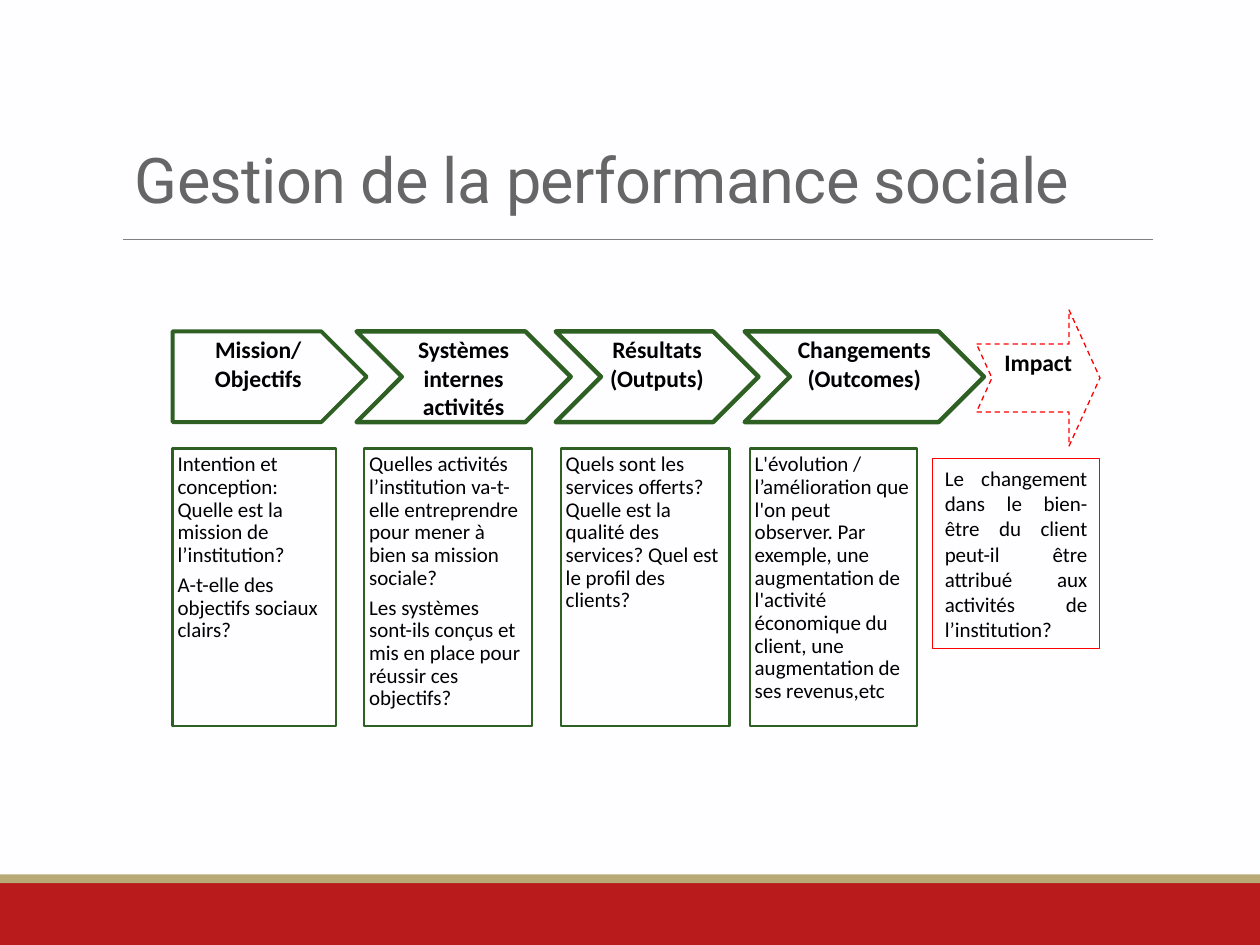
from lxml.etree import SubElement
from pptx import Presentation
from pptx.dml.color import RGBColor
from pptx.enum.dml import MSO_LINE
from pptx.enum.shapes import MSO_CONNECTOR, MSO_SHAPE
from pptx.enum.text import MSO_ANCHOR, PP_ALIGN
from pptx.oxml.ns import qn
from pptx.util import Inches, Pt

PAPER = RGBColor(0xFE, 0xFD, 0xFF)
WHITE = RGBColor(0xFF, 0xFF, 0xFF)
BLACK = RGBColor(0, 0, 0)
GREEN = RGBColor(0x2E, 0x60, 0x23)
RED = RGBColor(0xFF, 0, 0)
BAND_RED = RGBColor(0xB9, 0x1A, 0x1B)
BAND_GOLD = RGBColor(0xB8, 0xAA, 0x76)
RULE_GREY = RGBColor(0x80, 0x80, 0x80)
TITLE_GREY = RGBColor(0x66, 0x66, 0x66)

STEP_TOP, STEP_HEIGHT = 2.63, 0.72
CARD_TOP, CARD_HEIGHT = 3.56, 2.2

# Steps of the chain: shape, left, width, line width, paragraphs
STEPS = [
    (MSO_SHAPE.PENTAGON, 1.37, 1.54, 2.25, ["Mission/", "Objectifs"]),
    (MSO_SHAPE.CHEVRON, 2.83, 1.7, 2.5, ["Systèmes internes", "activités"]),
    (MSO_SHAPE.CHEVRON, 4.41, 1.61, 2.5, ["Résultats (Outputs)"]),
    (MSO_SHAPE.CHEVRON, 5.91, 1.9, 2.5, ["Changements", "(Outcomes)"]),
]

# Cards under the steps: left, width, paragraphs
CARDS = [
    (1.37, 1.3, [
        "Intention et conception: Quelle est la mission de l’institution?",
        "A-t-elle des objectifs sociaux clairs?"]),
    (2.89, 1.33, [
        "Quelles activités l’institution va-t-elle entreprendre pour mener "
        "à bien sa mission sociale?",
        "Les systèmes sont-ils conçus et mis en place pour réussir ces objectifs?"]),
    (4.45, 1.34, [
        "Quels sont les services offerts? Quelle est la qualité des services? "
        "Quel est le profil des clients?"]),
    (5.95, 1.33, [
        "L'évolution / l’amélioration que l'on peut observer. Par exemple, une "
        "augmentation de l'activité économique du client, une augmentation de "
        "ses revenus,etc"]),
]

IMPACT_QUESTION = ("Le changement dans le bien-être du client peut-il être "
                   "attribué aux activités de l’institution?")


def add_box(page, kind, left, top, width, height, fill=None, line=None, weight=1):
    box = page.shapes.add_shape(
        kind, Inches(left), Inches(top), Inches(width), Inches(height))
    box.shadow.inherit = False
    if fill is None:
        box.fill.background()
    else:
        box.fill.solid()
        box.fill.fore_color.rgb = fill
    if line is None:
        box.line.fill.background()
    else:
        box.line.color.rgb = line
        box.line.width = Pt(weight)
    return box


def write(box, texts, size, align, margins, bold=False, anchor=MSO_ANCHOR.TOP,
          line_spacing=1.0, space_after=0):
    frame = box.text_frame
    frame.word_wrap = True
    frame.vertical_anchor = anchor
    frame.margin_left = frame.margin_right = Inches(margins[0])
    frame.margin_top = frame.margin_bottom = Inches(margins[1])
    for index, text in enumerate(texts):
        para = frame.paragraphs[0] if index == 0 else frame.add_paragraph()
        para.alignment = align
        para.line_spacing = line_spacing
        para.space_after = Pt(space_after)
        span = para.add_run()
        span.text = text
        span.font.name = "Calibri"
        span.font.size = Pt(size)
        span.font.bold = bold
        span.font.color.rgb = BLACK


def add_rule(page, left, right, y):
    rule = page.shapes.add_connector(
        MSO_CONNECTOR.STRAIGHT, Inches(left), Inches(y), Inches(right), Inches(y))
    rule.line.color.rgb = RULE_GREY
    rule.line.width = Pt(0.5)
    SubElement(rule._element.spPr, qn("a:effectLst"))


def set_title(page, text):
    title = page.shapes.title
    title.left, title.top = Inches(0.97), Inches(0.58)
    title.width, title.height = Inches(7.76), Inches(1.19)
    title.text_frame.vertical_anchor = MSO_ANCHOR.BOTTOM
    para = title.text_frame.paragraphs[0]
    para.alignment = PP_ALIGN.LEFT
    para.line_spacing = 0.85
    span = para.add_run()
    span.text = text
    span.font.name = "Roboto"
    span.font.size = Pt(36)
    span.font.color.rgb = TITLE_GREY
    span._r.get_or_add_rPr().set("spc", "-40")


def add_step(page, kind, left, width, weight, texts):
    step = add_box(page, kind, left, STEP_TOP, width, STEP_HEIGHT,
                   line=GREEN, weight=weight)
    step.adjustments[0] = 0.5
    write(step, texts, 13.5, PP_ALIGN.CENTER, (0.06, 0.03), bold=True)


def add_card(page, left, width, texts):
    card = add_box(page, MSO_SHAPE.RECTANGLE, left, CARD_TOP, width, CARD_HEIGHT,
                   fill=PAPER, line=GREEN, weight=1.25)
    write(card, texts, 12, PP_ALIGN.LEFT, (0.04, 0.04),
          line_spacing=0.9, space_after=4.2)


def add_impact(page):
    arrow = add_box(page, MSO_SHAPE.NOTCHED_RIGHT_ARROW, 7.75, 2.46, 0.98, 1.08,
                    fill=WHITE, line=RED, weight=0.75)
    arrow.line.dash_style = MSO_LINE.DASH
    arrow.adjustments[0] = 0.5
    arrow.adjustments[1] = 0.25
    write(arrow, ["Impact"], 13.5, PP_ALIGN.CENTER, (0.06, 0.03), bold=True)

    question = add_box(page, MSO_SHAPE.RECTANGLE, 7.4, 3.64, 1.33, 1.51,
                       line=RED, weight=0.5)
    write(question, [IMPACT_QUESTION], 12, PP_ALIGN.JUSTIFY, (0.1, 0.05),
          anchor=MSO_ANCHOR.MIDDLE)


def main():
    deck = Presentation()
    deck.slide_width, deck.slide_height = Inches(10), Inches(7.5)
    page = deck.slides.add_slide(deck.slide_layouts[5])
    page.background.fill.solid()
    page.background.fill.fore_color.rgb = PAPER

    # Footer bands, title and rule
    add_box(page, MSO_SHAPE.RECTANGLE, 0, 7, 10, 0.5, fill=BAND_RED)
    add_box(page, MSO_SHAPE.RECTANGLE, 0, 6.94, 10, 0.07, fill=BAND_GOLD)
    add_rule(page, 0.98, 9.15, 1.9)
    set_title(page, "Gestion de la performance sociale")

    # Chain of steps with their questions
    for step in STEPS:
        add_step(page, *step)
    for card in CARDS:
        add_card(page, *card)
    add_impact(page)

    deck.save("out.pptx")


if __name__ == "__main__":
    main()
